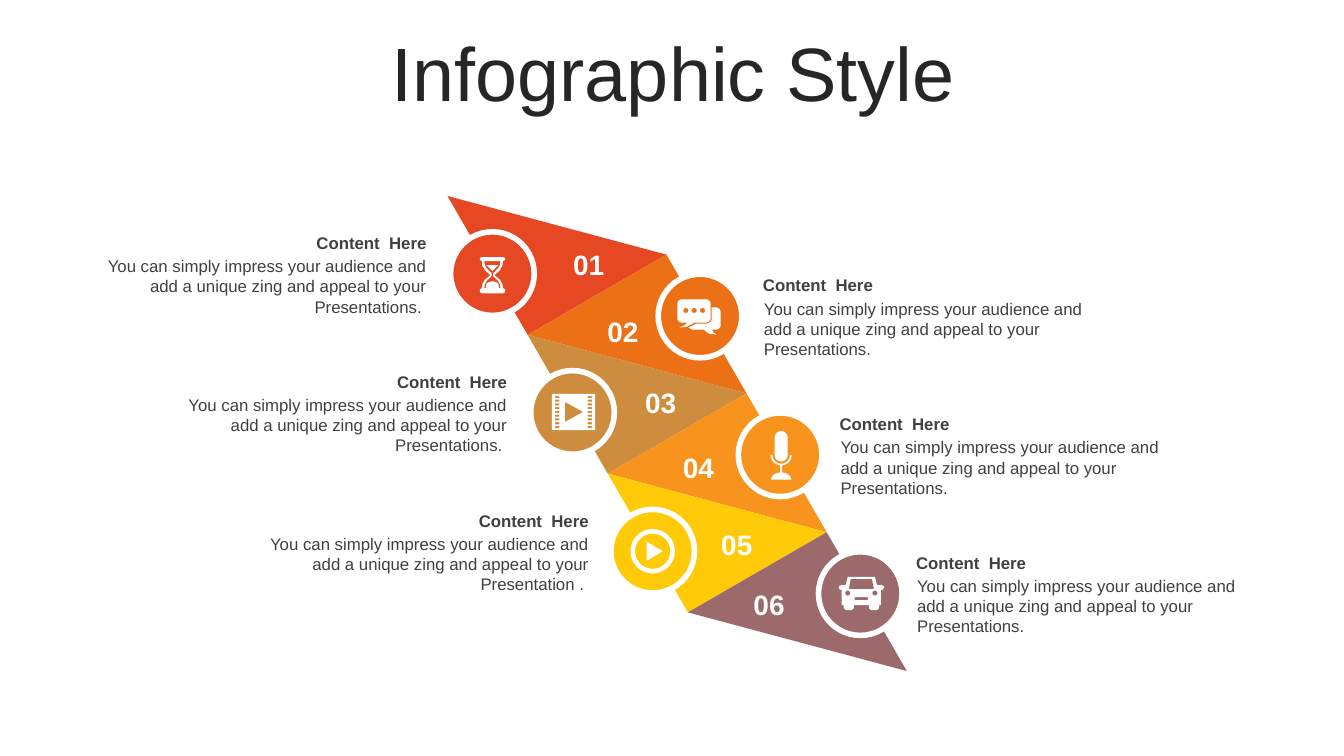
import math
from dataclasses import dataclass

import pptx
import pptx.dml.color
import pptx.enum.shapes
import pptx.enum.text
import pptx.util

Point = tuple[float, float]
Outline = list[Point]

MSO_SHAPE = pptx.enum.shapes.MSO_SHAPE
ANCHOR = pptx.enum.text.MSO_ANCHOR
ALIGN = pptx.enum.text.PP_ALIGN

COLORS = {
    "red": "E64823", "orange": "EC7016", "tan": "CE8D3E",
    "amber": "F8931D", "yellow": "FFCA08", "mauve": "9C6A6A",
    "white": "FFFFFF", "title": "262626", "text": "404040",
}

# Grid: 75 rows on the slide's height, square cells
COLS, ROWS = 133.33, 75
CELL = pptx.util.Inches(7.5) / ROWS
ICON_UNIT = CELL / 10

SIDE = 15.9
STEP_X = SIDE * math.sin(math.radians(30))
STEP_Y = SIDE * math.cos(math.radians(30))
CIRCLE = 8.3
BLURB = "You can simply impress your audience and add a unique zing and appeal to your "


@dataclass
class Item:
    color: str
    icon: str
    number_x: float  # centre of the number
    number_y: float
    text_x: float
    ending: str


ITEMS = [
    Item("red", "hourglass", 58.4, 24, 6.8, "Presentations. "),
    Item("orange", "chat", 61.8, 30.7, 74.7, "Presentations."),
    Item("tan", "film", 65.55, 37.7, 14.8, "Presentations. "),
    Item("amber", "microphone", 69.3, 44.2, 82.3, "Presentations."),
    Item("yellow", "play", 73.1, 51.8, 22.9, "Presentation . "),
    Item("mauve", "car", 76.3, 57.8, 89.9, "Presentations."),
]


# Outline helpers, in icon units from the circle's centre
def arc(cx: float, cy: float, rx: float, ry: float, start: int = 0, end: int = 360) -> Outline:
    n = max(4, abs(end - start) // 10)
    angles = [math.radians(start + (end - start) * i / n) for i in range(n + 1)]
    return [(cx + rx * math.cos(a), cy + ry * math.sin(a)) for a in angles]


def box(x1: float, y1: float, x2: float, y2: float, r: float = 0) -> Outline:
    if not r:
        return [(x1, y1), (x2, y1), (x2, y2), (x1, y2)]
    corners = [(x2 - r, y2 - r), (x1 + r, y2 - r), (x1 + r, y1 + r), (x2 - r, y1 + r)]
    return [p for i, (x, y) in enumerate(corners)
            for p in arc(x, y, r, r, 90 * i, 90 * i + 90)]


def mirror(half: Outline, axis: float = 0) -> Outline:
    return ([(axis + x, y) for x, y in half]
            + [(axis - x, y) for x, y in reversed(half)])


ICONS: dict[str, list[Outline]] = {
    "hourglass": [
        mirror([(10.5, -16.5), (12.5, -15.5), (12.5, -13.5), (10.5, -12.5), (10, -8),
                (7.5, -3.5), (2, 1.5), (7.5, 6), (10, 10.5), (10.5, 14.5),
                (12.5, 15.5), (12.5, 18.5), (10.5, 19.5)]),
        mirror([(8, -12.5), (7.5, -8.5), (5.5, -5), (0.75, -0.5), (0.75, 2.5),
                (5.5, 7), (7.5, 10.5), (8, 14.5)]),
        mirror([(6, -8.5), (4, -6.5), (0, -2.5)]),
        mirror([(0, 7.5), (4, 8.5), (6, 10), (6.5, 14.5)]),
    ],
    "chat": [
        box(-22.5, -16.5, 10.5, 6.5, 4.5),
        [(-12.5, 6.5), (-15, 9), (-20.5, 11.5), (-13, 10.5), (-5.5, 6.5)],
        *[arc(x, -5.5, 2.5, 2.5) for x in (-14, -5.75, 2.5)],
        [(11.5, -8.5), (16.5, -8.5), (19.5, -7), (20.5, -4.5), (20.5, 9.5),
         (19.5, 12), (16.5, 13.5), (12, 13.5), (13, 16), (16.5, 18.5), (9, 17.5),
         (3.5, 13.5), (-7.5, 13.5), (-11.5, 11.5), (-3.5, 7.5), (7.5, 7.5),
         (10.5, 6), (11.5, 3.5)],
    ],
    "film": [
        box(-20.5, -18.5, 22.5, 17.5),
        *[box(x, -16.5 + 3.75 * i, x + 4.5, -14.5 + 3.75 * i)
          for x in (-17.5, 15) for i in range(9)],
        [(-7.5, -10.5), (10.5, -0.5), (-7.5, 9.5)],
    ],
    "microphone": [
        box(-5.5, -23.5, 7.5, 6.5, 6.5),
        arc(1, 0, 10.5, 10.5, 0, 180) + arc(1, 0, 8.75, 8.75, 180, 0),
        box(0, 10.5, 2, 17.5),
        arc(1, 24.5, 10, 7, 180, 360),
    ],
    "play": [arc(0, 0, 22, 22), arc(0, 0, 17.5, 17.5), [(-6, -9.5), (10, 0), (-6, 9.5)]],
    "car": [
        mirror([(13.5, -16.5), (15.5, -8.5), (19.5, -8.5), (22, -7.5), (22.5, -6),
                (21.5, -4), (19.5, -3.5), (19.5, 11.5), (17.5, 11.5), (17.5, 14.5),
                (15.5, 16.5), (9.5, 16.5), (7.5, 14.5), (7.5, 11.5)], 1),
        mirror([(10.5, -14.5), (12.5, -4.5)], 1),
        *[arc(1 + x, -0.5, 2.5, 2.5) for x in (-13.5, 13.5)],
        mirror([(6, 3.5), (7.25, 5), (6, 6.5)], 1),
    ],
}


def cells(*values: float) -> list[pptx.util.Emu]:
    return [pptx.util.Emu(round(v * CELL)) for v in values]


def rgb(name: str) -> pptx.dml.color.RGBColor:
    return pptx.dml.color.RGBColor.from_string(COLORS[name])


def paint(sp, color: str, line: float = 0) -> None:
    sp.shadow.inherit = False
    sp.fill.solid()
    sp.fill.fore_color.rgb = rgb(color)
    if line:
        sp.line.color.rgb = rgb("white")
        sp.line.width = pptx.util.Pt(line)
    else:
        sp.line.fill.background()


def write(sp, text: str, *, size: float = 12, color: str = "text", bold: bool = False,
          align=ALIGN.LEFT, anchor=ANCHOR.MIDDLE):
    tf = sp.text_frame
    tf.word_wrap = True
    tf.vertical_anchor = anchor
    p = tf.paragraphs[0]
    p.alignment = align
    r = p.add_run()
    r.text = text
    r.font.name, r.font.size, r.font.bold = "Arial", pptx.util.Pt(size), bold
    r.font.color.rgb = rgb(color)
    return p


def draw_icon(s, name: str, cx: float, cy: float) -> None:
    outlines = [[(round(cx * CELL + x * ICON_UNIT), round(cy * CELL + y * ICON_UNIT))
                 for x, y in outline] for outline in ICONS[name]]
    builder = s.shapes.build_freeform(*outlines[0][0], scale=1.0)
    builder.add_line_segments(outlines[0][1:], close=True)
    for outline in outlines[1:]:
        builder.move_to(*outline[0])
        builder.add_line_segments(outline[1:], close=True)
    paint(builder.convert_to_shape(), "white")


def draw_triangle(s, index: int, item: Item) -> None:
    step = (index + 1) // 2
    sp = s.shapes.add_shape(MSO_SHAPE.RIGHT_TRIANGLE,
                            *cells(47.3 + STEP_X * step, 14.4 + STEP_Y * step, SIDE, SIDE))
    sp.rotation = 150 if index % 2 else 330
    paint(sp, item.color)


def draw_item(s, index: int, item: Item) -> None:
    step, right = divmod(index, 2)
    x = (65.3 if right else 44.7) + STEP_X * step
    y = (27.2 if right else 23) + STEP_Y * step

    # Circle with icon
    sp = s.shapes.add_shape(MSO_SHAPE.OVAL, *cells(x, y, CIRCLE, CIRCLE))
    paint(sp, item.color, line=4)
    draw_icon(s, item.icon, x + CIRCLE / 2, y + CIRCLE / 2)

    # Number
    sp = s.shapes.add_textbox(*cells(item.number_x - 3.5, item.number_y, 7, 4.4))
    write(sp, f"{index + 1:02}", size=20, color="white", bold=True, align=ALIGN.CENTER)

    # Heading and text
    width = 33.8 if right else 36.5
    align = ALIGN.LEFT if right else ALIGN.RIGHT
    sp = s.shapes.add_textbox(*cells(item.text_x, y - 0.4, width, 3))
    write(sp, "Content  Here", bold=True, align=align)
    sp = s.shapes.add_textbox(*cells(item.text_x + 0.1, y + 1.9, width - 0.1, 7.1))
    write(sp, BLURB + item.ending, align=align, anchor=ANCHOR.TOP)


def main() -> None:
    prs = pptx.Presentation()
    prs.slide_width, prs.slide_height = cells(COLS, ROWS)
    s = prs.slides.add_slide(prs.slide_layouts[5])

    # Title
    title = s.shapes.title
    title.left, title.top, title.width, title.height = cells(3.5, 3.7, 126.6, 7.9)
    p = write(title, "Infographic Style", size=54, color="title", align=ALIGN.CENTER)
    p.line_spacing = 0.9
    p.space_before = pptx.util.Pt(10)

    # Folded ribbon, then the items on it
    for draw in (draw_triangle, draw_item):
        for index, item in enumerate(ITEMS):
            draw(s, index, item)
    prs.save("out.pptx")


if __name__ == "__main__":
    main()
